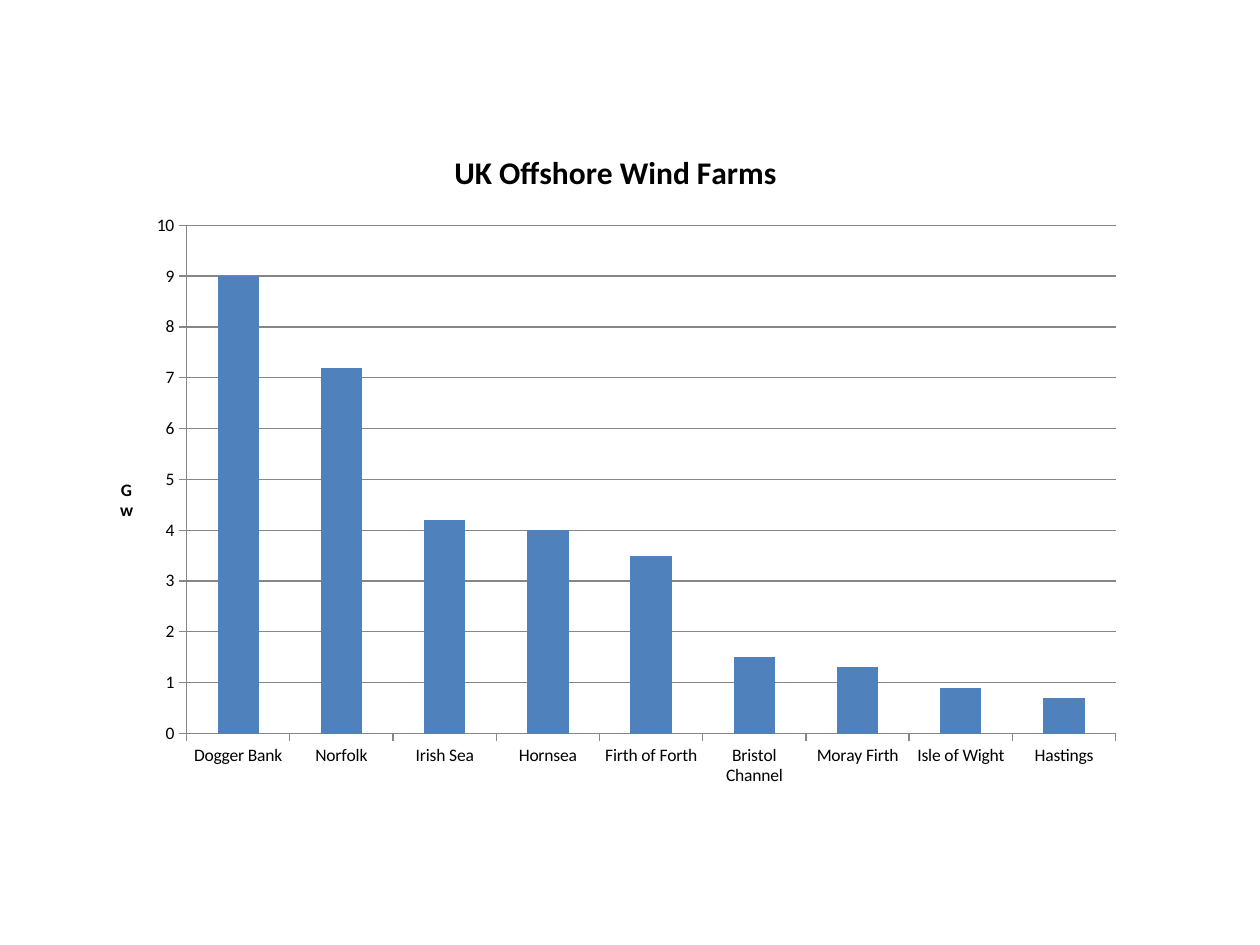
"""Build a slide with a column chart of UK offshore wind farm capacity."""
from pptx import Presentation
from pptx.chart.data import CategoryChartData
from pptx.dml.color import RGBColor
from pptx.enum.chart import XL_CHART_TYPE as ChartType, XL_TICK_MARK as Tick
from pptx.util import Inches, Pt

TITLE = "UK Offshore Wind Farms"
UNIT = "Gw"
FARMS = {
    "Dogger Bank": 9,
    "Norfolk": 7.2,
    "Irish Sea": 4.2,
    "Hornsea": 4,
    "Firth of Forth": 3.5,
    "Bristol Channel": 1.5,
    "Moray Firth": 1.3,
    "Isle of Wight": 0.9,
    "Hastings": 0.7,
}
COLORS = {"bar": "4F81BD", "line": "868686", "text": "000000"}
FONT = "Calibri"
CHART_BOX = (0.75, 0.99, 8.27, 5.35)


def color(name):
    return RGBColor.from_string(COLORS[name])


def set_font(font, size, bold=False):
    for key, value in {"name": FONT, "size": Pt(size), "bold": bold}.items():
        setattr(font, key, value)
    font.color.rgb = color("text")


def set_title(tf, text, size):
    tf.text = text
    set_font(tf.paragraphs[0].runs[0].font, size, bold=True)


def set_line(line):
    line.color.rgb = color("line")
    line.width = Pt(0.75)


def main():
    prs = Presentation()
    prs.slide_width, prs.slide_height = Inches(10), Inches(7.5)
    s = prs.slides.add_slide(prs.slide_layouts[6])

    data = CategoryChartData()
    data.categories = list(FARMS)
    data.add_series("Series 1", list(FARMS.values()))
    chart = s.shapes.add_chart(
        ChartType.COLUMN_CLUSTERED, *map(Inches, CHART_BOX), data).chart
    set_font(chart.font, 10)
    chart.has_legend = False
    set_title(chart.chart_title.text_frame, TITLE, 18)

    plot = chart.plots[0]
    plot.gap_width = 150
    plot.vary_by_categories = False
    fill = plot.series[0].format.fill
    fill.solid()
    fill.fore_color.rgb = color("bar")

    val_axis = chart.value_axis
    for axis in (chart.category_axis, val_axis):
        axis.major_tick_mark = Tick.OUTSIDE
        axis.minor_tick_mark = Tick.NONE
        set_line(axis.format.line)
        set_font(axis.tick_labels.font, 10)
    for key, value in {"minimum_scale": 0, "maximum_scale": 10,
                       "major_unit": 1, "has_major_gridlines": True}.items():
        setattr(val_axis, key, value)
    set_line(val_axis.major_gridlines.format.line)

    tf = val_axis.axis_title.text_frame
    set_title(tf, UNIT, 10)
    body = tf._txBody.bodyPr
    body.set("rot", "0")
    body.set("vert", "wordArtVert")

    prs.save("out.pptx")


if __name__ == "__main__":
    main()
